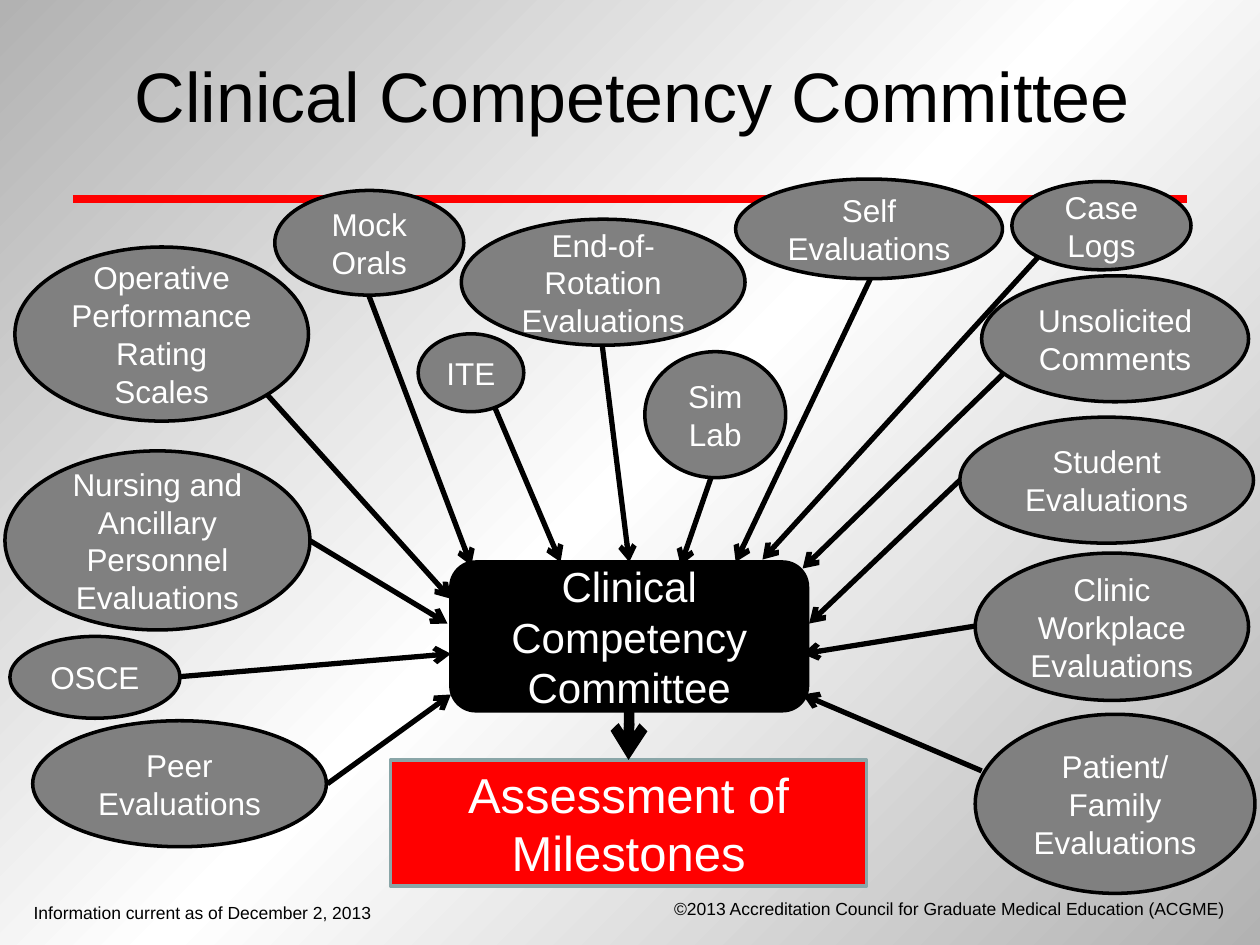
from copy import deepcopy
from dataclasses import dataclass

from lxml import etree
from pptx import Presentation
from pptx.dml.color import RGBColor
from pptx.enum.shapes import MSO_CONNECTOR, MSO_SHAPE
from pptx.enum.text import MSO_ANCHOR, PP_ALIGN
from pptx.oxml.ns import qn
from pptx.util import Cm, Pt

STRAIGHT = MSO_CONNECTOR.STRAIGHT
ELLIPSE, RECT, ROUNDED = MSO_SHAPE.OVAL, MSO_SHAPE.RECTANGLE, MSO_SHAPE.ROUNDED_RECTANGLE
LEFT, CENTER, RIGHT = PP_ALIGN.LEFT, PP_ALIGN.CENTER, PP_ALIGN.RIGHT
TOP, MIDDLE = MSO_ANCHOR.TOP, MSO_ANCHOR.MIDDLE
TOP_SITE, BOTTOM_SITE = 0, 2


@dataclass(frozen=True)
class Theme:
    font: str = "Arial"
    black: str = "000000"
    white: str = "FFFFFF"
    red: str = "FF0000"
    gray: str = "808080"
    silver: str = "B2B2B2"
    teal: str = "8AA6A8"
    title: int = 40
    goal: int = 28
    hub: int = 24
    source: int = 18
    footer: int = 10


THEME = Theme()

# Evaluation sources: text, (left, top, width, height), arrow start, arrow end; in cm
SOURCES = [
    ("End-of-Rotation Evaluations", (9.3, 4.42, 5.72, 2.54), (12.14, 6.96), (12.69, 11.33)),
    ("Peer Evaluations", (0.66, 14.53, 5.92, 2.54), (6.6, 15.8), (9.09, 14)),
    ("Self\nEvaluations", (14.83, 3.61, 5.38, 2.01), (17.55, 5.61), (14.83, 11.33)),
    ("Case Logs", (20.4, 3.66, 3.61, 1.78), (20.93, 5.18), (15.37, 11.28)),
    ("Student Evaluations", (19.35, 8.41, 5.92, 2.54), (19.35, 9.68), (16.31, 12.57)),
    ("Patient/ Family Evaluations", (19.66, 14.4, 5.64, 3.61), (19.79, 15.54), (16.18, 14)),
    ("Operative Performance Rating Scales", (0.3, 4.98, 5.92, 3.51), (5.38, 7.95), (9.09, 12.07)),
    ("Nursing and Ancillary Personnel Evaluations", (0.1, 9.09, 6.15, 3.61),
     (6.25, 10.9), (9.02, 12.57)),
    ("Clinic Workplace Evaluations", (19.66, 11.15, 5.51, 2.97), (19.66, 12.62), (16.18, 13.18)),
    ("Mock Orals", (5.54, 3.84, 3.81, 2.11), (7.44, 5.97), (9.5, 11.4)),
    ("OSCE", (0.2, 12.83, 3.43, 1.65), (3.63, 13.64), (9.09, 13.18)),
    ("ITE", (8.43, 6.73, 2.13, 1.57), (9.96, 8.18), (11.3, 11.33)),
    ("Sim\nLab", (13, 7.09, 2.84, 2.54), (14.35, 9.58), (13.72, 11.4)),
    ("Unsolicited\nComments", (19.79, 5.56, 5.38, 2.54), (20.24, 7.52), (16.18, 11.46)),
]


def rgb(color):
    return RGBColor.from_string(color)


def set_background(slide):
    fill = slide.background.fill
    fill.gradient()
    fill.gradient_angle = 315
    gs_list = slide.element.find(".//" + qn("a:gsLst"))
    gs_list.insert(1, deepcopy(gs_list[0]))
    colors = (THEME.silver, THEME.white, THEME.silver)
    for stop, position, color in zip(fill.gradient_stops, (0, 0.5, 1), colors):
        stop.position = position
        stop.color.rgb = rgb(color)


def set_text(sp, text, size, color, align=CENTER, anchor=MIDDLE, wrap=True):
    tf = sp.text_frame
    tf.text = text
    for name, value in {"word_wrap": wrap, "vertical_anchor": anchor}.items():
        setattr(tf, name, value)
    for p in tf.paragraphs:
        p.alignment = align
        for r in p.runs:
            for name, value in {"name": THEME.font, "size": Pt(size)}.items():
                setattr(r.font, name, value)
            r.font.color.rgb = rgb(color)


def place(sp, box):
    for name, value in zip(("left", "top", "width", "height"), box):
        setattr(sp, name, Cm(value))


def add_node(slide, kind, box, text, size, fill, line):
    sp = slide.shapes.add_shape(kind, *map(Cm, box))
    sp.shadow.inherit = False
    sp.fill.solid()
    sp.fill.fore_color.rgb = rgb(fill)
    sp.line.color.rgb = rgb(line)
    sp.line.width = Pt(2)
    set_text(sp, text, size, THEME.white)
    return sp


def add_line(slide, start, end, color, width, arrow=True):
    line = slide.shapes.add_connector(STRAIGHT, *map(Cm, start + end))
    line.line.color.rgb = rgb(color)
    line.line.width = Pt(width)
    if arrow:
        etree.SubElement(line.line._get_or_add_ln(), qn("a:tailEnd"), type="arrow")
    etree.SubElement(line._element.spPr, qn("a:effectLst"))
    return line


def add_footer(slide, box, text, align, wrap):
    sp = slide.shapes.add_textbox(*map(Cm, box))
    set_text(sp, text, THEME.footer, THEME.black, align, TOP, wrap)


def main():
    prs = Presentation()
    prs.slide_width, prs.slide_height = Cm(25.4), Cm(19.05)
    slide = prs.slides.add_slide(prs.slide_layouts[5])
    set_background(slide)

    # Title, rule and footers
    title = slide.shapes.title
    place(title, (0.58, 0.84, 24.33, 2.13))
    set_text(title, "Clinical Competency Committee", THEME.title, THEME.black)
    add_line(slide, (1.47, 4.01), (23.93, 4.01), THEME.red, 5, arrow=False)
    add_footer(slide, (0.43, 18.06, 7.37, 0.69),
               "Information current as of December 2, 2013", LEFT, False)
    add_footer(slide, (12.85, 17.98, 12.07, 0.69),
               "©2013 Accreditation Council for Graduate Medical Education (ACGME)", RIGHT, True)

    # Committee and its outcome
    hub = add_node(slide, ROUNDED, (9.09, 11.33, 7.19, 3), "Clinical Competency Committee",
                   THEME.hub, THEME.black, THEME.black)
    goal = add_node(slide, RECT, (7.87, 15.32, 9.6, 2.54), "Assessment of Milestones",
                    THEME.goal, THEME.red, THEME.teal)
    outcome = add_line(slide, (12.69, 14.33), (12.67, 15.32), THEME.black, 6)
    outcome.begin_connect(hub, BOTTOM_SITE)
    outcome.end_connect(goal, TOP_SITE)

    # Arrows lie beneath the evaluation sources
    for _, _, start, end in SOURCES:
        arrow = add_line(slide, start, end, THEME.black, 3)
        if end == (12.69, 11.33):
            arrow.end_connect(hub, TOP_SITE)
    for text, box, _, _ in SOURCES:
        add_node(slide, ELLIPSE, box, text, THEME.source, THEME.gray, THEME.black)

    prs.save("out.pptx")


if __name__ == "__main__":
    main()
